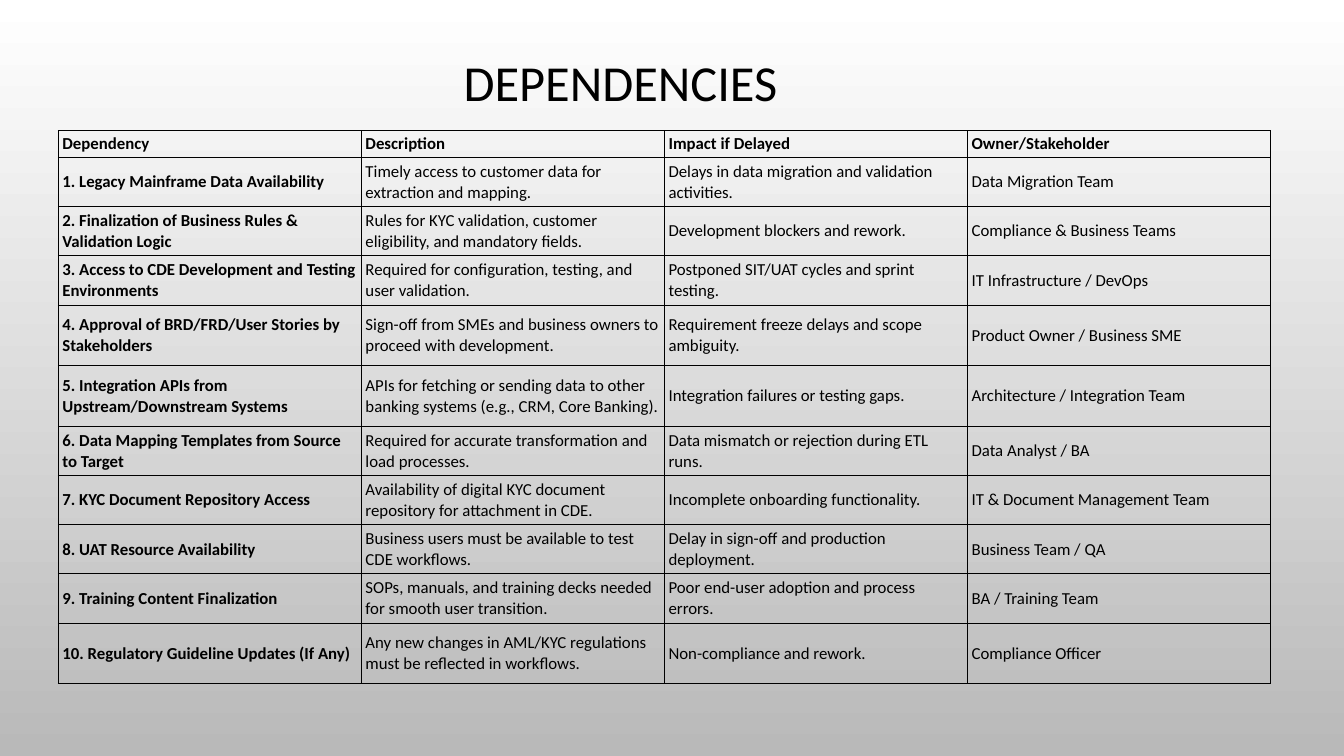
from lxml.etree import SubElement
from pptx import Presentation
from pptx.dml.color import RGBColor
from pptx.enum.text import MSO_ANCHOR as Anchor, PP_ALIGN as Align
from pptx.oxml.ns import qn
from pptx.util import Pt

COLORS = {"ink": "000000", "top": "FFFFFF", "bottom": "B9B9B9"}
FONT = "Calibri"


def write(frame, text, size=12, bold=False, align=Align.LEFT, spacing=1.0):
    paragraph = frame.paragraphs[0]
    paragraph.alignment = align
    paragraph.line_spacing = spacing
    run = paragraph.add_run()
    run.text = text
    run.font.name = FONT
    run.font.size = Pt(size)
    run.font.bold = bold
    run.font.color.rgb = RGBColor.from_string(COLORS["ink"])


def add_borders(cell, width=0.75):
    properties = cell._tc.get_or_add_tcPr()
    for index, side in enumerate(("lnL", "lnR", "lnT", "lnB")):
        line = SubElement(properties, qn(f"a:{side}"), w=str(Pt(width)))
        fill = SubElement(line, qn("a:solidFill"))
        SubElement(fill, qn("a:srgbClr"), val=COLORS["ink"])
        properties.insert(index, line)


deck = Presentation()
deck.slide_width, deck.slide_height = Pt(960), Pt(540)
slide = deck.slides.add_slide(deck.slide_layouts[5])

# Background fading from top to bottom
backdrop = slide.background.fill
backdrop.gradient()
backdrop.gradient_angle = 270
for stop, shade, position in zip(backdrop.gradient_stops, ("top", "bottom"), (0, 1)):
    stop.color.rgb = RGBColor.from_string(COLORS[shade])
    stop.position = position

# Title
heading = slide.shapes.title
heading.left, heading.top, heading.width, heading.height = Pt(66), Pt(28.8), Pt(754.5), Pt(64.8)
heading.text_frame.vertical_anchor = Anchor.MIDDLE
write(heading.text_frame, "DEPENDENCIES", size=36, align=Align.CENTER, spacing=0.9)

# Dependencies: name, description, impact, owner
dependencies = [
    ("Dependency", "Description", "Impact if Delayed", "Owner/Stakeholder"),
    ("1. Legacy Mainframe Data Availability",
     "Timely access to customer data for extraction and mapping.",
     "Delays in data migration and validation activities.", "Data Migration Team"),
    ("2. Finalization of Business Rules & Validation Logic",
     "Rules for KYC validation, customer eligibility, and mandatory fields.",
     "Development blockers and rework.", "Compliance & Business Teams"),
    ("3. Access to CDE Development and Testing Environments",
     "Required for configuration, testing, and user validation.",
     "Postponed SIT/UAT cycles and sprint testing.", "IT Infrastructure / DevOps"),
    ("4. Approval of BRD/FRD/User Stories by Stakeholders",
     "Sign-off from SMEs and business owners to proceed with development.",
     "Requirement freeze delays and scope ambiguity.", "Product Owner / Business SME"),
    ("5. Integration APIs from Upstream/Downstream Systems",
     "APIs for fetching or sending data to other banking systems (e.g., CRM, Core Banking).",
     "Integration failures or testing gaps.", "Architecture / Integration Team"),
    ("6. Data Mapping Templates from Source to Target",
     "Required for accurate transformation and load processes.",
     "Data mismatch or rejection during ETL runs.", "Data Analyst / BA"),
    ("7. KYC Document Repository Access",
     "Availability of digital KYC document repository for attachment in CDE.",
     "Incomplete onboarding functionality.", "IT & Document Management Team"),
    ("8. UAT Resource Availability",
     "Business users must be available to test CDE workflows.",
     "Delay in sign-off and production deployment.", "Business Team / QA"),
    ("9. Training Content Finalization",
     "SOPs, manuals, and training decks needed for smooth user transition.",
     "Poor end-user adoption and process errors.", "BA / Training Team"),
    ("10. Regulatory Guideline Updates (If Any)",
     "Any new changes in AML/KYC regulations must be reflected in workflows.",
     "Non-compliance and rework.", "Compliance Officer"),
]
HEADER, NORMAL, TALL = 19.3, 35.1, 43.4
heights = [HEADER] + [TALL if number in (4, 5, 10) else NORMAL for number in range(1, 11)]
column_width = 216.5

# Table
grid = slide.shapes.add_table(len(dependencies), 4, Pt(41.7), Pt(93.3),
                              Pt(4 * column_width), Pt(sum(heights))).table
grid.first_row = grid.horz_banding = False
for column in grid.columns:
    column.width = Pt(column_width)
for row_index, (dependency, height) in enumerate(zip(dependencies, heights)):
    grid.rows[row_index].height = Pt(height)
    for column_index, text in enumerate(dependency):
        cell = grid.cell(row_index, column_index)
        cell.vertical_anchor = Anchor.MIDDLE
        cell.margin_left = cell.margin_right = Pt(2.9)
        cell.margin_top = cell.margin_bottom = Pt(1.45)
        cell.fill.background()
        add_borders(cell)
        write(cell.text_frame, text, bold=row_index == 0 or column_index == 0)

deck.save("out.pptx")
